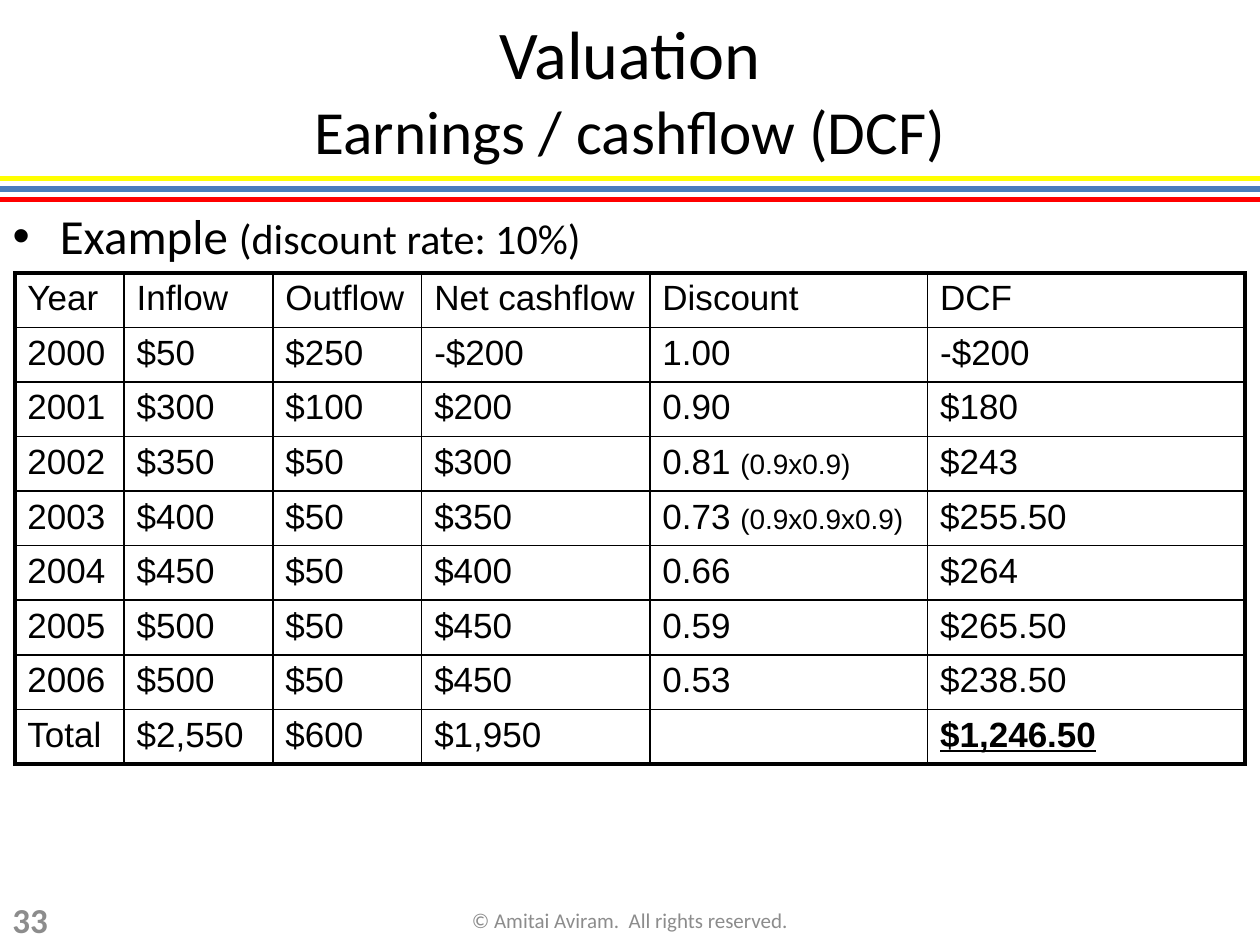
from lxml import etree
from pptx import Presentation
from pptx.dml.color import RGBColor
from pptx.enum.shapes import MSO_CONNECTOR
from pptx.enum.text import MSO_ANCHOR, MSO_AUTO_SIZE, PP_ALIGN
from pptx.oxml.ns import qn
from pptx.util import Cm, Pt

STRAIGHT = MSO_CONNECTOR.STRAIGHT
TOP, MIDDLE = MSO_ANCHOR.TOP, MSO_ANCHOR.MIDDLE
CENTER, JUSTIFY = PP_ALIGN.CENTER, PP_ALIGN.JUSTIFY
NO_AUTOFIT = MSO_AUTO_SIZE.NONE

SLIDE_WIDTH, SLIDE_HEIGHT = 25.4, 19.05
BLACK, GREY = "000000", "8C8C8C"
STRIPES = ["FFFF00", "4B7EBC", "FF0000"]
THIN, THICK = 1, 2.25

COLUMN_WIDTHS = [2.2, 3, 3, 4.6, 5.6, 6.4]
ROW_HEIGHT = 1.1
CASHFLOWS = [
    ["Year", "Inflow", "Outflow", "Net cashflow", "Discount", "DCF"],
    ["2000", "$50", "$250", "-$200", "1.00", "-$200"],
    ["2001", "$300", "$100", "$200", "0.90", "$180"],
    ["2002", "$350", "$50", "$300", "0.81 (0.9x0.9)", "$243"],
    ["2003", "$400", "$50", "$350", "0.73 (0.9x0.9x0.9)", "$255.50"],
    ["2004", "$450", "$50", "$400", "0.66", "$264"],
    ["2005", "$500", "$50", "$450", "0.59", "$265.50"],
    ["2006", "$500", "$50", "$450", "0.53", "$238.50"],
    ["Total", "$2,550", "$600", "$1,950", "", "$1,246.50"],
]


def color(hex_value):
    return RGBColor.from_string(hex_value)


def place(shape, box):
    for name, value in zip(("left", "top", "width", "height"), box):
        setattr(shape, name, Cm(value))


def add_run(paragraph, text, size, font="Calibri", hex_value=BLACK, **formats):
    run = paragraph.add_run()
    run.text = text
    formats = {"size": Pt(size), "name": font, **formats}
    for name, value in formats.items():
        setattr(run.font, name, value)
    run.font.color.rgb = color(hex_value)


def format_frame(shape, anchor):
    formats = {"word_wrap": True, "auto_size": NO_AUTOFIT, "vertical_anchor": anchor}
    for name, value in formats.items():
        setattr(shape.text_frame, name, value)
    return shape.text_frame.paragraphs[0]


def fill_title(slide, box):
    title = slide.shapes.title
    place(title, box)
    paragraph = format_frame(title, MIDDLE)
    paragraph.alignment = CENTER
    add_run(paragraph, "Valuation", 39)
    paragraph.add_line_break()
    line_break = paragraph._p.find(qn("a:br"))
    etree.SubElement(line_break, qn("a:rPr"), sz="3900")
    add_run(paragraph, "Earnings / cashflow (DCF)", 35)


def add_stripes(slide, box):
    """Spread the stripes evenly from the top to the bottom of the box."""
    left, top, width, height = box
    gap = height / (len(STRIPES) - 1)
    for index, hex_value in enumerate(STRIPES):
        y = Cm(top + index * gap)
        stripe = slide.shapes.add_connector(STRAIGHT, Cm(left), y, Cm(left + width), y)
        stripe.line.color.rgb = color(hex_value)
        stripe.line.width = Pt(3)
        etree.SubElement(stripe._element.spPr, qn("a:effectLst"))


def fill_body(slide, box):
    body = slide.placeholders[1]
    place(body, box)
    paragraph = format_frame(body, TOP)
    add_run(paragraph, "Example ", 28)
    add_run(paragraph, "(discount rate: 10%)", 24)


def set_borders(cell, widths):
    properties = cell._tc.get_or_add_tcPr()
    for side, width in widths.items():
        line = etree.SubElement(properties, qn(f"a:ln{side}"), w=str(Pt(width)))
        fill = etree.SubElement(line, qn("a:solidFill"))
        etree.SubElement(fill, qn("a:srgbClr"), val=BLACK)


def set_space_before(paragraph, percent):
    space = etree.SubElement(paragraph._p.get_or_add_pPr(), qn("a:spcBef"))
    etree.SubElement(space, qn("a:spcPct"), val=str(percent * 1000))


def fill_cell(cell, text, is_result):
    """Write the value, with any working in brackets set smaller."""
    paragraph = cell.text_frame.paragraphs[0]
    set_space_before(paragraph, 20)
    value, bracket, working = text.partition("(")
    emphasis = {"bold": True, "underline": True} if is_result else {}
    if value:
        add_run(paragraph, value, 20, "Arial", **emphasis)
    if working:
        add_run(paragraph, bracket + working, 16, "Arial")


def add_cashflow_table(slide, left, top):
    last_row, last_column = len(CASHFLOWS) - 1, len(COLUMN_WIDTHS) - 1
    frame = slide.shapes.add_table(
        last_row + 1, last_column + 1, Cm(left), Cm(top),
        Cm(sum(COLUMN_WIDTHS)), Cm(ROW_HEIGHT * len(CASHFLOWS)))
    table = frame.table
    table.first_row = table.horz_banding = False
    for column, width in zip(table.columns, COLUMN_WIDTHS):
        column.width = Cm(width)
    for row_index, values in enumerate(CASHFLOWS):
        table.rows[row_index].height = Cm(ROW_HEIGHT)
        for column_index, text in enumerate(values):
            cell = table.cell(row_index, column_index)
            outer = {"L": column_index == 0, "R": column_index == last_column,
                     "T": row_index == 0, "B": row_index == last_row}
            set_borders(cell, {side: THICK if edge else THIN for side, edge in outer.items()})
            cell.fill.background()
            fill_cell(cell, text, outer["R"] and outer["B"])


def add_footer_text(slide, box, text, size, alignment, **formats):
    footer = slide.shapes.add_textbox(*map(Cm, box))
    paragraph = format_frame(footer, MIDDLE)
    paragraph.alignment = alignment
    add_run(paragraph, text, size, hex_value=GREY, **formats)


def add_footer(slide, box):
    left, top, width, height = box
    notice_width = 8.05
    notice_left = left + (width - notice_width) / 2
    add_footer_text(slide, (left, top, 1.7, height), "33", 20, JUSTIFY, bold=True)
    add_footer_text(slide, (notice_left, top, notice_width, height),
                    "© Amitai Aviram.  All rights reserved.", 12, CENTER)


def main():
    presentation = Presentation()
    presentation.slide_width = Cm(SLIDE_WIDTH)
    presentation.slide_height = Cm(SLIDE_HEIGHT)
    slide = presentation.slides.add_slide(presentation.slide_layouts[1])
    add_stripes(slide, (0, 3.6, SLIDE_WIDTH, 0.42))
    fill_title(slide, (0, 0, SLIDE_WIDTH, 3.6))
    fill_body(slide, (0, 4.02, SLIDE_WIDTH, 1.6))
    add_cashflow_table(slide, 0.3, 5.5)
    add_footer(slide, (0, 18.03, SLIDE_WIDTH, 1.02))
    presentation.save("out.pptx")


if __name__ == "__main__":
    main()
